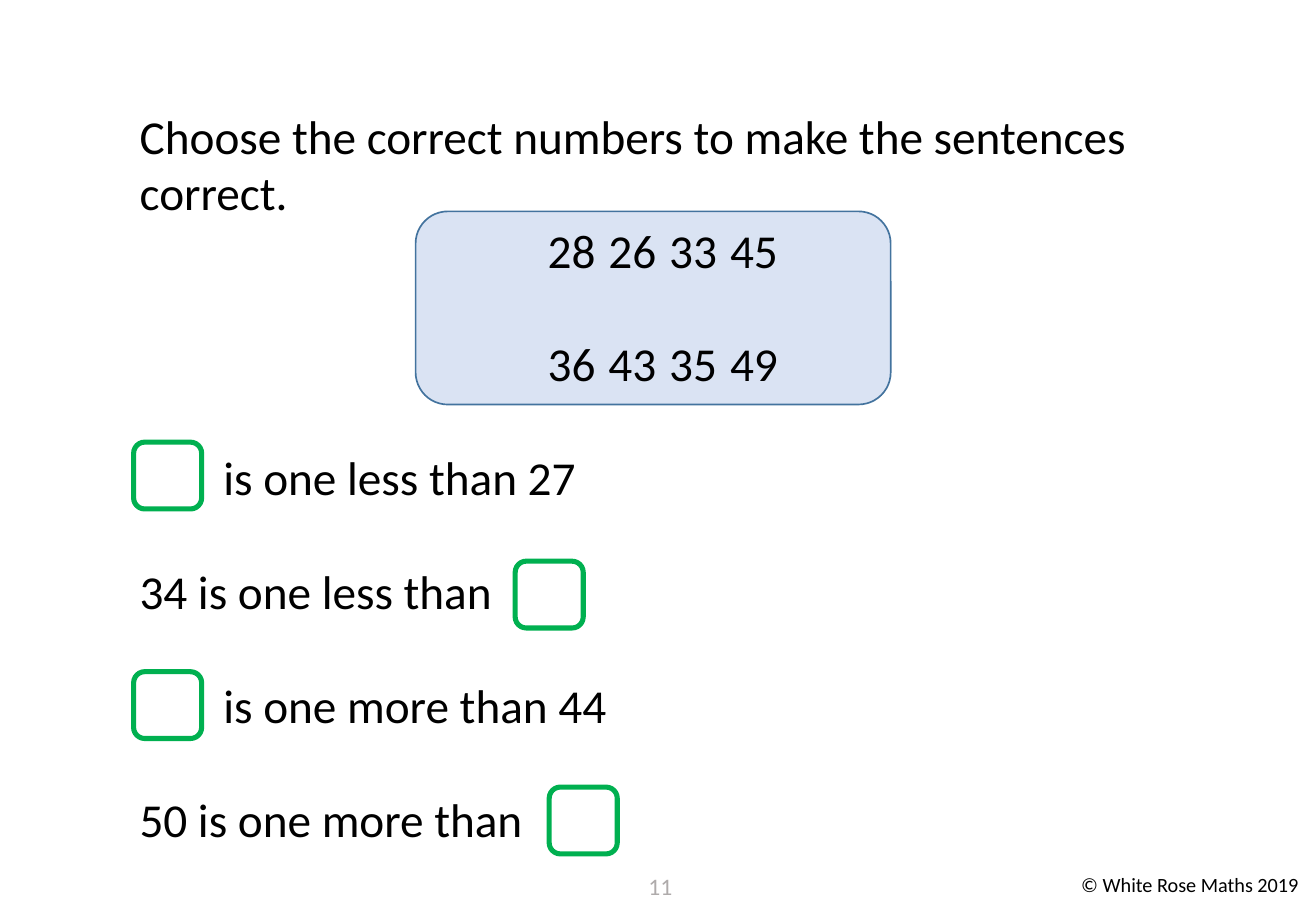
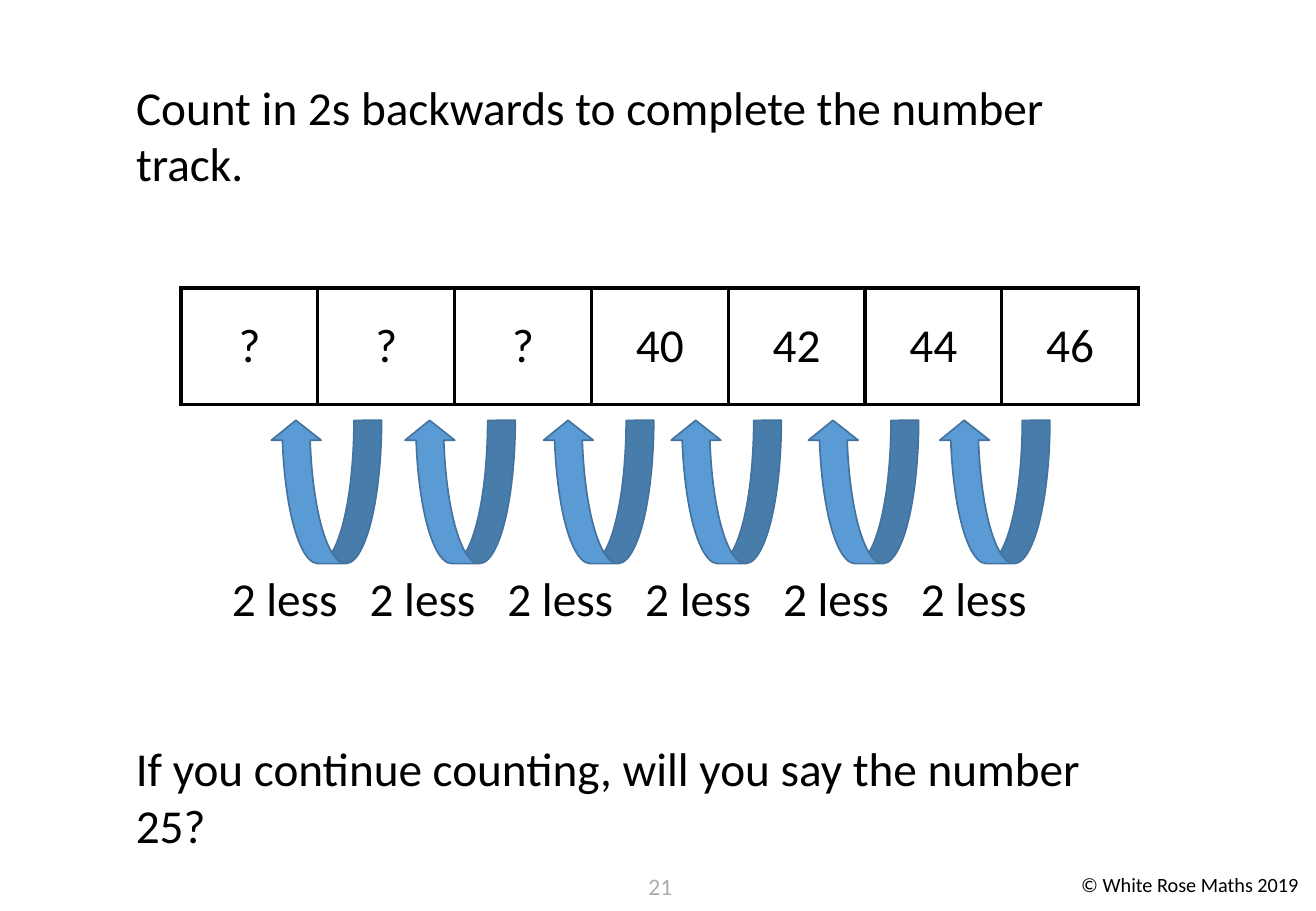
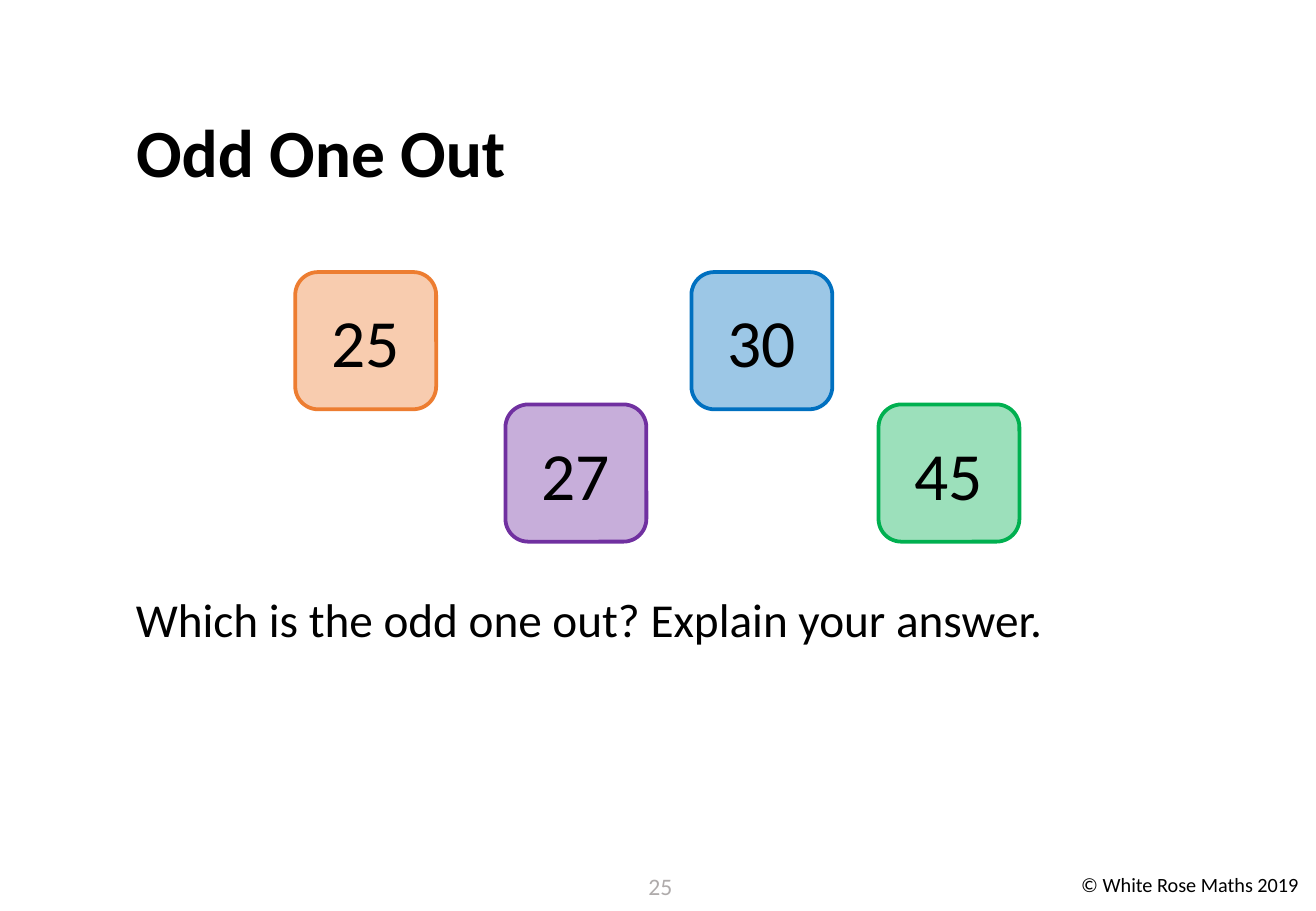
from dataclasses import dataclass
from typing import NamedTuple

from lxml.etree import SubElement
from pptx import Presentation
from pptx.dml.color import RGBColor
from pptx.enum.shapes import MSO_SHAPE
from pptx.enum.text import MSO_ANCHOR, MSO_AUTO_SIZE, PP_ALIGN
from pptx.oxml.ns import qn
from pptx.shapes.autoshape import Shape
from pptx.slide import Slide
from pptx.table import _Cell
from pptx.text.text import TextFrame
from pptx.util import Inches, Pt


@dataclass(frozen=True)
class Theme:
    """Colours, font and type sizes of the lesson."""
    font: str = "Calibri"
    black: str = "000000"
    white: str = "FFFFFF"
    grey: str = "AFABAB"
    pale_blue: str = "DAE3F3"
    arrow_blue: str = "5B9BD5"
    outline_blue: str = "43739E"
    orange: str = "ED7D31"
    purple: str = "7030A0"
    blue: str = "0070C0"
    green: str = "00B050"
    heading: int = 40
    body: int = 28
    page_number: int = 14
    copyright: int = 12


THEME = Theme()


class Box(NamedTuple):
    """A position and size in inches."""
    left: float
    top: float
    width: float
    height: float

    def lengths(self) -> list[Inches]:
        """Give the four values as lengths."""
        return [Inches(value) for value in self]


class Sentence(NamedTuple):
    """A sentence with the left edges of its text and answer square."""
    text: str
    left: float
    square_left: float
    square_top: float


class NumberCard(NamedTuple):
    """A coloured card showing one number."""
    text: str
    left: float
    top: float
    color: str


SENTENCES = [
    Sentence("is one less than 27", 1.74, 1.1, 3.64),
    Sentence("34 is one less than", 1.05, 4.24, 4.62),
    Sentence("is one more than 44", 1.74, 1.1, 5.53),
    Sentence("50 is one more than", 1.05, 4.52, 6.48),
]
TRACK = ["?", "?", "?", "40", "42", "44", "46"]
ARROW_LEFTS = [2.23, 3.33, 4.47, 5.52, 6.65, 7.73]
UPPER_ROW, LOWER_ROW = 2.24, 3.33
NUMBER_CARDS = [
    NumberCard("25", 2.43, UPPER_ROW, THEME.orange),
    NumberCard("27", 4.16, LOWER_ROW, THEME.purple),
    NumberCard("30", 5.69, UPPER_ROW, THEME.blue),
    NumberCard("45", 7.23, LOWER_ROW, THEME.green),
]


def format_text(text_frame: TextFrame, size: int, color: str = THEME.black,
                align: PP_ALIGN = PP_ALIGN.LEFT, bold: bool = False) -> None:
    """Give every paragraph the same font and alignment."""
    for paragraph in text_frame.paragraphs:
        paragraph.alignment = align
        paragraph.line_spacing = 1.0
        for run in paragraph.runs:
            run.font.name = THEME.font
            run.font.size = Pt(size)
            run.font.bold = bold
            run.font.color.rgb = RGBColor.from_string(color)


def add_text(slide: Slide, text: str, box: Box, size: int = THEME.body,
             color: str = THEME.black, align: PP_ALIGN = PP_ALIGN.LEFT) -> None:
    """Add a wrapped text box."""
    text_frame = slide.shapes.add_textbox(*box.lengths()).text_frame
    text_frame.word_wrap = True
    text_frame.text = text
    format_text(text_frame, size, color, align)


def add_figure(slide: Slide, kind: MSO_SHAPE, box: Box, fill: str,
               line: str, line_width: float) -> Shape:
    """Add a filled and outlined preset shape."""
    shape = slide.shapes.add_shape(kind, *box.lengths())
    shape.shadow.inherit = False
    shape.fill.solid()
    shape.fill.fore_color.rgb = RGBColor.from_string(fill)
    shape.line.color.rgb = RGBColor.from_string(line)
    shape.line.width = Pt(line_width)
    return shape


def add_slide(presentation: Presentation, title: str, box: Box, number: int,
              size: int = THEME.body, bold: bool = False) -> Slide:
    """Add a slide with its title, page number and copyright line."""
    slide = presentation.slides.add_slide(presentation.slide_layouts[5])
    shape = slide.shapes.title
    shape.left, shape.top, shape.width, shape.height = box.lengths()
    text_frame = shape.text_frame
    text_frame.text = title
    text_frame.word_wrap = True
    text_frame.auto_size = MSO_AUTO_SIZE.NONE
    text_frame.vertical_anchor = MSO_ANCHOR.TOP
    format_text(text_frame, size, bold=bold)
    add_text(slide, str(number), Box(5.18, 7.13, 0.51, 0.34),
             THEME.page_number, THEME.grey, PP_ALIGN.CENTER)
    add_text(slide, "© White Rose Maths 2019", Box(8.8, 7.13, 2.03, 0.3), THEME.copyright)
    return slide


def set_borders(cell: _Cell, width: float) -> None:
    """Draw a black line on all four sides of a cell."""
    properties = cell._tc.get_or_add_tcPr()
    for index, side in enumerate(("a:lnL", "a:lnR", "a:lnT", "a:lnB")):
        line = SubElement(properties, qn(side), w=str(Pt(width)))
        properties.insert(index, line)
        fill = SubElement(line, qn("a:solidFill"))
        SubElement(fill, qn("a:srgbClr"), val=THEME.black)


def set_opacity(shape: Shape, percent: int) -> None:
    """Make a solid fill partly transparent."""
    color = shape._element.spPr.find(qn("a:solidFill")).find(qn("a:srgbClr"))
    SubElement(color, qn("a:alpha"), val=str(percent * 1000))


def add_number_bank(slide: Slide) -> None:
    """Add the panel with two rows of numbers set on tab stops."""
    panel = add_figure(slide, MSO_SHAPE.ROUNDED_RECTANGLE, Box(3.42, 1.74, 3.91, 1.59),
                       THEME.pale_blue, THEME.outline_blue, 1)
    text_frame = panel.text_frame
    text_frame.text = "28\t26\t33\t45\n36\t43\t35\t49"
    text_frame.vertical_anchor = MSO_ANCHOR.MIDDLE
    text_frame.margin_left = Inches(1.01)
    text_frame.margin_right = text_frame.margin_top = Inches(0)
    text_frame.margin_bottom = Inches(0.03)
    for paragraph in text_frame.paragraphs:
        stops = SubElement(paragraph._p.get_or_add_pPr(), qn("a:tabLst"))
        for stop in range(1, 4):
            SubElement(stops, qn("a:tab"), pos=str(Inches(0.5 * stop)), algn="l")
    format_text(text_frame, THEME.body)
    text_frame.paragraphs[1].space_before = Pt(33)


def build_sentences(presentation: Presentation) -> None:
    """Build the slide with sentences to complete."""
    slide = add_slide(presentation, "Choose the correct numbers to make the sentences correct.",
                      Box(1.05, 0.83, 8.81, 1.05), 11)
    add_number_bank(slide)
    for row, sentence in enumerate(SENTENCES):
        add_text(slide, sentence.text, Box(sentence.left, 3.64 + 0.94 * row, 4, 0.57))
        add_figure(slide, MSO_SHAPE.ROUNDED_RECTANGLE,
                   Box(sentence.square_left, sentence.square_top, 0.56, 0.55),
                   THEME.white, THEME.green, 3)


def build_number_track(presentation: Presentation) -> None:
    """Build the slide that counts backwards along a track."""
    slide = add_slide(presentation, "Count in 2s backwards to complete the number track.",
                      Box(1.02, 0.59, 8.4, 1.05), 21)
    track = slide.shapes.add_table(1, len(TRACK), *Box(1.49, 2.37, 7.88, 0.96).lengths()).table
    track.first_row = track.horz_banding = False
    for cell, text in zip(track.rows[0].cells, TRACK):
        cell.text = text
        cell.vertical_anchor = MSO_ANCHOR.MIDDLE
        cell.fill.background()
        format_text(cell.text_frame, THEME.body, align=PP_ALIGN.CENTER)
        set_borders(cell, 2.25)
    for step, left in enumerate(ARROW_LEFTS):
        arrow = add_figure(slide, MSO_SHAPE.CURVED_DOWN_ARROW, Box(left, 3.46, 0.91, 1.18),
                           THEME.arrow_blue, THEME.outline_blue, 1)
        arrow.rotation = 180
        for index, value in enumerate((0.25, 0.45, 0.18)):
            arrow.adjustments[index] = value
        add_text(slide, "2 less", Box(1.81 + 1.134 * step, 4.64, 1.13, 0.57))
    add_text(slide, "If you continue counting, will you say the number 25?",
             Box(1.02, 6.04, 8.4, 1.05))


def build_odd_one_out(presentation: Presentation) -> None:
    """Build the slide with four number cards."""
    slide = add_slide(presentation, "Odd One Out", Box(1.02, 0.86, 8.24, 0.77), 25,
                      THEME.heading, bold=True)
    for card in NUMBER_CARDS:
        shape = add_figure(slide, MSO_SHAPE.ROUNDED_RECTANGLE,
                           Box(card.left, card.top, 1.16, 1.13), card.color, card.color, 2.25)
        set_opacity(shape, 39)
        shape.text_frame.text = card.text
        shape.text_frame.vertical_anchor = MSO_ANCHOR.MIDDLE
        format_text(shape.text_frame, THEME.heading, align=PP_ALIGN.CENTER)
    add_text(slide, "Which is the odd one out? Explain your answer.", Box(1.02, 4.81, 8.24, 0.57))


def main() -> None:
    """Build the three slides and save them."""
    presentation = Presentation()
    presentation.slide_width = Inches(10.83)
    presentation.slide_height = Inches(7.5)
    build_sentences(presentation)
    build_number_track(presentation)
    build_odd_one_out(presentation)
    presentation.save("out.pptx")


if __name__ == "__main__":
    main()
